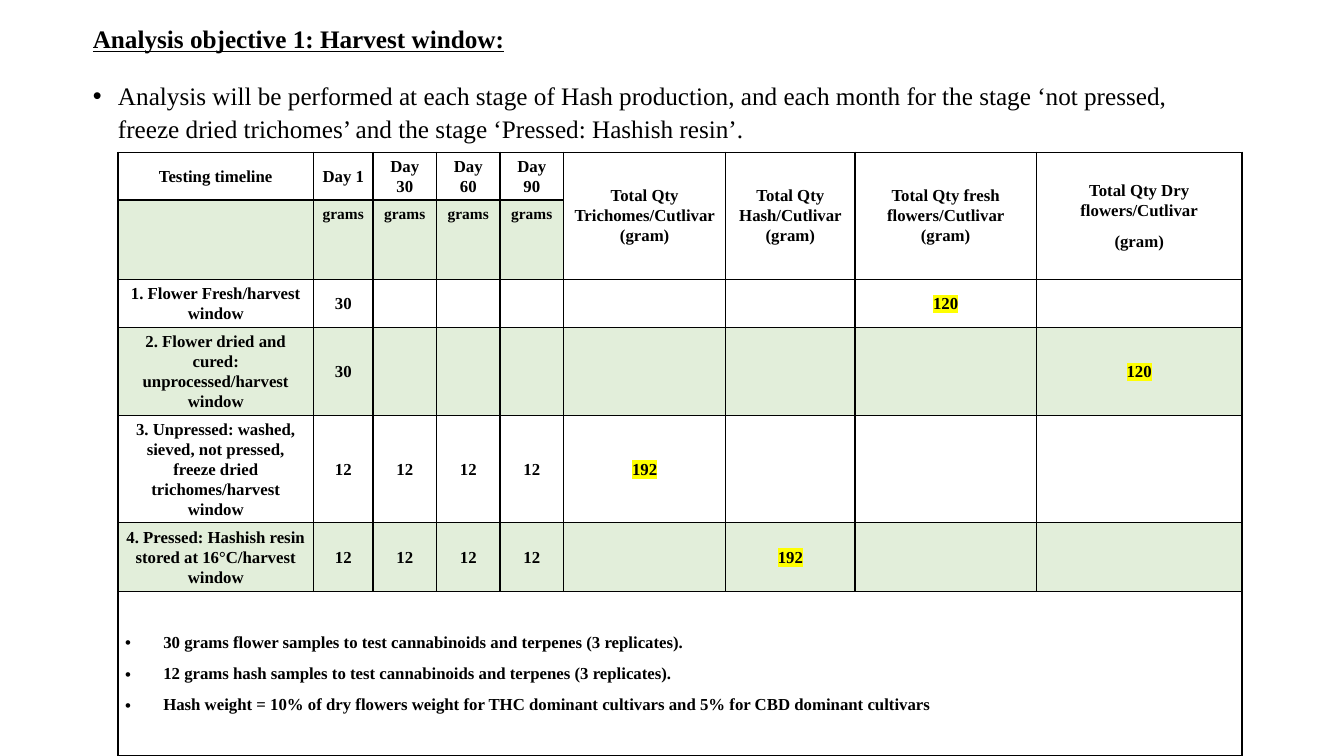
from lxml import etree
from pptx import Presentation
from pptx.dml.color import RGBColor
from pptx.enum.text import MSO_ANCHOR, MSO_AUTO_SIZE, PP_ALIGN
from pptx.oxml.ns import qn
from pptx.util import Inches, Pt

MIDDLE, TOP = MSO_ANCHOR.MIDDLE, MSO_ANCHOR.TOP
CENTER, LEFT = PP_ALIGN.CENTER, PP_ALIGN.LEFT
NO_AUTOFIT = MSO_AUTO_SIZE.NONE

BLACK = RGBColor(0x00, 0x00, 0x00)
GREEN = RGBColor(0x70, 0xAD, 0x47)
YELLOW = RGBColor(0xFF, 0xFF, 0x00)
FONT = "Times New Roman"
LINE_SPACING = 1.07

HEADING = "Analysis objective 1: Harvest window:"
SUMMARY = ("Analysis will be performed at each stage of Hash production, and each month "
           "for the stage ‘not pressed, freeze dried trichomes’ and the stage "
           "‘Pressed: Hashish resin’.")

COLUMN_WIDTHS = [1.94, 0.59, 0.63, 0.63, 0.63, 1.61, 1.28, 1.8, 2.04]
ROW_HEIGHTS = [0.47, 0.78, 0.48, 0.87, 1.06, 0.68, 1.63]
UNITS_ROW, NOTES_ROW = 1, 6
FIRST_TOTAL = 5
SHADED_ROWS = (1, 3, 5)

# A line break in a cell starts a new paragraph
SCHEDULE = [
    ["Testing timeline", "Day 1", "Day 30", "Day 60", "Day 90",
     "Total Qty Trichomes/Cutlivar (gram)", "Total Qty Hash/Cutlivar (gram)",
     "Total Qty fresh flowers/Cutlivar (gram)", "Total Qty Dry flowers/Cutlivar\n(gram)"],
    ["", "grams", "grams", "grams", "grams", "", "", "", ""],
    ["1. Flower Fresh/harvest window", "30", "", "", "", "", "", "120", ""],
    ["2. Flower dried and cured: unprocessed/harvest window",
     "30", "", "", "", "", "", "", "120"],
    ["3. Unpressed: washed, sieved, not pressed, freeze dried trichomes/harvest window",
     "12", "12", "12", "12", "192", "", "", ""],
    ["4. Pressed: Hashish resin stored at 16°C/harvest window",
     "12", "12", "12", "12", "", "192", "", ""],
    ["30 grams flower samples to test cannabinoids and terpenes (3 replicates).\n"
     "12 grams hash samples to test cannabinoids and terpenes (3 replicates).\n"
     "Hash weight = 10% of dry flowers weight for THC dominant cultivars "
     "and 5% for CBD dominant cultivars"] + [""] * 8,
]


def set_bullet(paragraph, indent):
    """Hang a bullet by the indent, or remove it when the indent is 0."""
    properties = paragraph._p.get_or_add_pPr()
    properties.set("marL", str(Inches(indent)))
    properties.set("indent", str(-Inches(indent)))
    if indent:
        etree.SubElement(properties, qn("a:buFont"), typeface="Arial")
        etree.SubElement(properties, qn("a:buChar"), char="•")
    else:
        etree.SubElement(properties, qn("a:buNone"))


def format_paragraph(paragraph, size, bold, align, before=0, after=8):
    paragraph.alignment = align
    paragraph.line_spacing = LINE_SPACING
    paragraph.space_before, paragraph.space_after = Pt(before), Pt(after)
    font = paragraph.font
    font.name, font.size, font.bold = FONT, Pt(size), bold
    font.color.rgb = BLACK


def highlight(run):
    mark = etree.SubElement(run._r.get_or_add_rPr(), qn("a:highlight"))
    etree.SubElement(mark, qn("a:srgbClr"), val=str(YELLOW))


def set_borders(cell):
    properties = cell._tc.get_or_add_tcPr()
    for position, side in enumerate(("a:lnL", "a:lnR", "a:lnT", "a:lnB")):
        border = etree.Element(qn(side), w=str(Pt(1)))
        fill = etree.SubElement(border, qn("a:solidFill"))
        etree.SubElement(fill, qn("a:srgbClr"), val=str(BLACK))
        properties.insert(position, border)


def shade(cell, shaded):
    if not shaded:
        cell.fill.background()
        return
    cell.fill.solid()
    cell.fill.fore_color.rgb = GREEN
    color = cell._tc.tcPr.find(".//" + qn("a:srgbClr"))
    etree.SubElement(color, qn("a:alpha"), val="20000")


def fill_cell(cell, row, column, text):
    cell.margin_left = cell.margin_right = Inches(0.07)
    cell.margin_top = cell.margin_bottom = Inches(0.04)
    cell.vertical_anchor = TOP if row == UNITS_ROW else MIDDLE
    cell.text = text
    is_note = row == NOTES_ROW
    for paragraph in cell.text_frame.paragraphs:
        if is_note and text:
            set_bullet(paragraph, 0.38)
        is_total = UNITS_ROW < row < NOTES_ROW and column >= FIRST_TOTAL
        format_paragraph(paragraph, 11 if row == UNITS_ROW else 12, True,
                         LEFT if is_note else CENTER, after=0 if is_total else 8)
        if is_total:
            for run in paragraph.runs:
                highlight(run)
    shade(cell, row in SHADED_ROWS and (row != UNITS_ROW or column < FIRST_TOTAL))
    set_borders(cell)


def add_introduction(slide, left, top, width, height):
    body = slide.placeholders[1]
    body.left, body.top, body.width, body.height = left, top, width, height
    frame = body.text_frame
    frame.word_wrap, frame.auto_size = True, NO_AUTOFIT
    frame.vertical_anchor = TOP

    heading = frame.paragraphs[0]
    heading.text = HEADING
    set_bullet(heading, 0)
    format_paragraph(heading, 18, True, LEFT)
    heading.font.underline = True

    summary = frame.add_paragraph()
    summary.text = SUMMARY
    set_bullet(summary, 0.25)
    format_paragraph(summary, 18, False, LEFT, before=10)


def add_schedule(slide, left, top, width, height):
    table = slide.shapes.add_table(len(ROW_HEIGHTS), len(COLUMN_WIDTHS),
                                   left, top, width, height).table
    table.first_row = table.horz_banding = False
    for column, inches in zip(table.columns, COLUMN_WIDTHS):
        column.width = Inches(inches)
    for row, inches in zip(table.rows, ROW_HEIGHTS):
        row.height = Inches(inches)

    # Totals span both header rows, notes span the full width
    last = len(COLUMN_WIDTHS) - 1
    for column in range(FIRST_TOTAL, last + 1):
        table.cell(0, column).merge(table.cell(UNITS_ROW, column))
    table.cell(NOTES_ROW, 0).merge(table.cell(NOTES_ROW, last))

    for row, texts in enumerate(SCHEDULE):
        for column, text in enumerate(texts):
            fill_cell(table.cell(row, column), row, column, text)


def main():
    deck = Presentation()
    deck.slide_width, deck.slide_height = Inches(13.33), Inches(7.5)
    slide = deck.slides.add_slide(deck.slide_layouts[1])

    # The heading leads the body text, so the title placeholder is not needed
    title = slide.shapes.title._element
    title.getparent().remove(title)

    add_introduction(slide, Inches(0.82), Inches(0.16), Inches(11.5), Inches(6.84))
    add_schedule(slide, Inches(1.17), Inches(1.51),
                 Inches(sum(COLUMN_WIDTHS)), Inches(sum(ROW_HEIGHTS)))
    deck.save("out.pptx")


if __name__ == "__main__":
    main()
